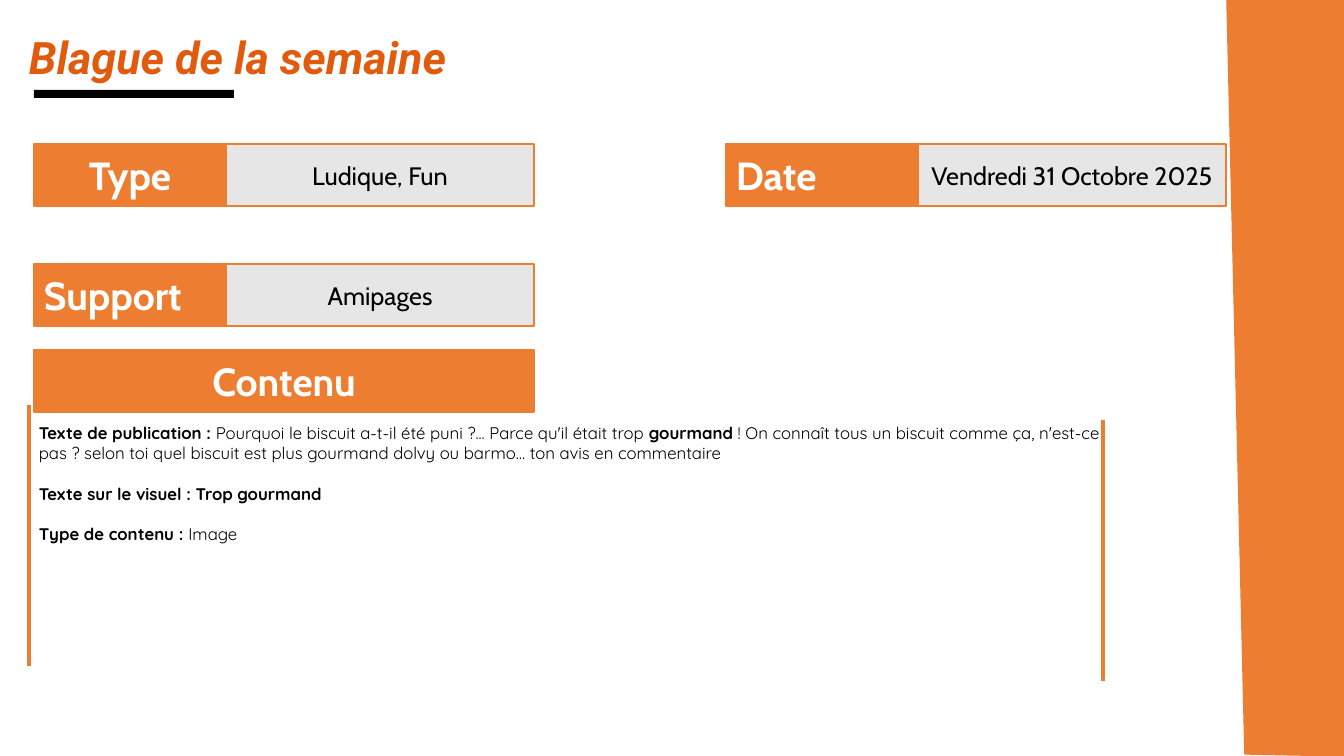
from dataclasses import dataclass

from lxml import etree
from pptx import Presentation
from pptx.dml.color import RGBColor
from pptx.enum.shapes import MSO_CONNECTOR, MSO_SHAPE
from pptx.enum.text import MSO_ANCHOR, PP_ALIGN
from pptx.oxml.ns import qn
from pptx.util import Emu, Pt

RECTANGLE = MSO_SHAPE.RECTANGLE
STRAIGHT = MSO_CONNECTOR.STRAIGHT
LEFT, CENTER, JUSTIFY = PP_ALIGN.LEFT, PP_ALIGN.CENTER, PP_ALIGN.JUSTIFY
TOP, MIDDLE = MSO_ANCHOR.TOP, MSO_ANCHOR.MIDDLE
EMU_PER_PX = 914400 / 100.8


@dataclass(frozen=True)
class Theme:
    orange: RGBColor = RGBColor(0xED, 0x7D, 0x31)
    title_orange: RGBColor = RGBColor(0xE1, 0x5B, 0x0F)
    grey: RGBColor = RGBColor(0xE7, 0xE6, 0xE6)
    black: RGBColor = RGBColor(0, 0, 0)
    white: RGBColor = RGBColor(0xFF, 0xFF, 0xFF)
    title_size: Pt = Pt(32)
    label_size: Pt = Pt(28)
    value_size: Pt = Pt(18)
    body_size: Pt = Pt(12)
    body_gap: Pt = Pt(14.4)
    border: Pt = Pt(1)
    rule: Pt = Pt(2.25)


THEME = Theme()
TITLE = {"name": "Roboto", "size": THEME.title_size, "bold": True, "italic": True}
LABEL = {"name": "Cabin", "size": THEME.label_size, "bold": True}
VALUE = {"name": "Cabin", "size": THEME.value_size, "bold": False}
BODY = {"name": "Quicksand", "size": THEME.body_size, "bold": False}
STRONG = {**BODY, "bold": True}

LEFT_EDGE, LABEL_WIDTH, VALUE_WIDTH, ROW_HEIGHT = 34, 192, 308, 62
FIELDS = [
    (LEFT_EDGE, 144, "Type", "Ludique, Fun", CENTER),
    (726, 144, "Date", "Vendredi 31 Octobre 2025", LEFT),
    (LEFT_EDGE, 264, "Support", "Amipages", LEFT),
]
CONTENT = [
    [
        ("Texte de publication : ", STRONG),
        ("Pourquoi le biscuit a-t-il été puni ?... Parce qu'il était trop ", BODY),
        ("gourmand", STRONG),
        (" ! On connaît tous un biscuit comme ça, n'est-ce pas ? selon toi quel "
         "biscuit est plus gourmand dolvy ou barmo… ton avis en commentaire", BODY),
    ],
    [("Texte sur le visuel : Trop gourmand", STRONG)],
    [("Type de contenu : ", STRONG), ("Image", BODY)],
]


def px(*lengths):
    return [Emu(round(length * EMU_PER_PX)) for length in lengths]


def paint(shape, fill, border):
    shape.shadow.inherit = False
    shape.fill.solid()
    shape.fill.fore_color.rgb = fill
    if border is None:
        shape.line.fill.background()
    else:
        shape.line.color.rgb = border
        shape.line.width = THEME.border


def write(para, spans, color, align):
    para.alignment = align
    for text, style in spans:
        span = para.add_run()
        span.text = text
        span.font.color.rgb = color
        for key, value in style.items():
            setattr(span.font, key, value)


def add_box(page, area, fill, border=None):
    box = page.shapes.add_shape(RECTANGLE, *px(*area))
    paint(box, fill, border)
    return box


def add_cell(page, area, text, style, fill, color, align):
    frame = add_box(page, area, fill, THEME.orange).text_frame
    frame.vertical_anchor = MIDDLE
    write(frame.paragraphs[0], [(text, style)], color, align)


def add_label(page, area, text, align):
    add_cell(page, area, text, LABEL, THEME.orange, THEME.white, align)


def add_field(page, left, top, label, value, align):
    add_label(page, (left, top, LABEL_WIDTH, ROW_HEIGHT), label, align)
    area = (left + LABEL_WIDTH, top, VALUE_WIDTH, ROW_HEIGHT)
    add_cell(page, area, value, VALUE, THEME.grey, THEME.black, CENTER)


def add_text(page, area, paragraphs, color, align):
    frame = page.shapes.add_textbox(*px(*area)).text_frame
    frame.word_wrap = True
    frame.vertical_anchor = TOP
    for index, spans in enumerate(paragraphs):
        para = frame.add_paragraph() if index else frame.paragraphs[0]
        if index:
            para.space_before = THEME.body_gap
        write(para, spans, color, align)


def add_rule(page, left, top, height):
    rule = page.shapes.add_connector(STRAIGHT, *px(left, top, left, top + height))
    rule.line.color.rgb = THEME.orange
    rule.line.width = THEME.rule
    etree.SubElement(rule._element.spPr, qn("a:effectLst"))


def add_side_band(page):
    start, *corners = [px(*point) for point in
                       ((1227, 0), (1344, 0), (1344, 756), (1245, 754))]
    builder = page.shapes.build_freeform(*start)
    builder.add_line_segments(corners, close=True)
    paint(builder.convert_to_shape(), THEME.orange, THEME.orange)


def main():
    deck = Presentation()
    deck.slide_width, deck.slide_height = px(1344, 756)
    page = deck.slides.add_slide(deck.slide_layouts[6])

    add_side_band(page)
    add_box(page, (LEFT_EDGE, 90, 200, 8), THEME.black)
    for field in FIELDS:
        add_field(page, *field)
    add_rule(page, 29, 405, 261)
    add_label(page, (LEFT_EDGE, 350, LABEL_WIDTH + VALUE_WIDTH, ROW_HEIGHT),
              "Contenu", CENTER)
    add_rule(page, 1103, 420, 261)
    add_text(page, (29, 418, 1083, 152), CONTENT, THEME.black, LEFT)
    add_text(page, (19, 25, 1112, 52), [[("Blague de la semaine", TITLE)]],
             THEME.title_orange, JUSTIFY)

    deck.save("out.pptx")


if __name__ == "__main__":
    main()
